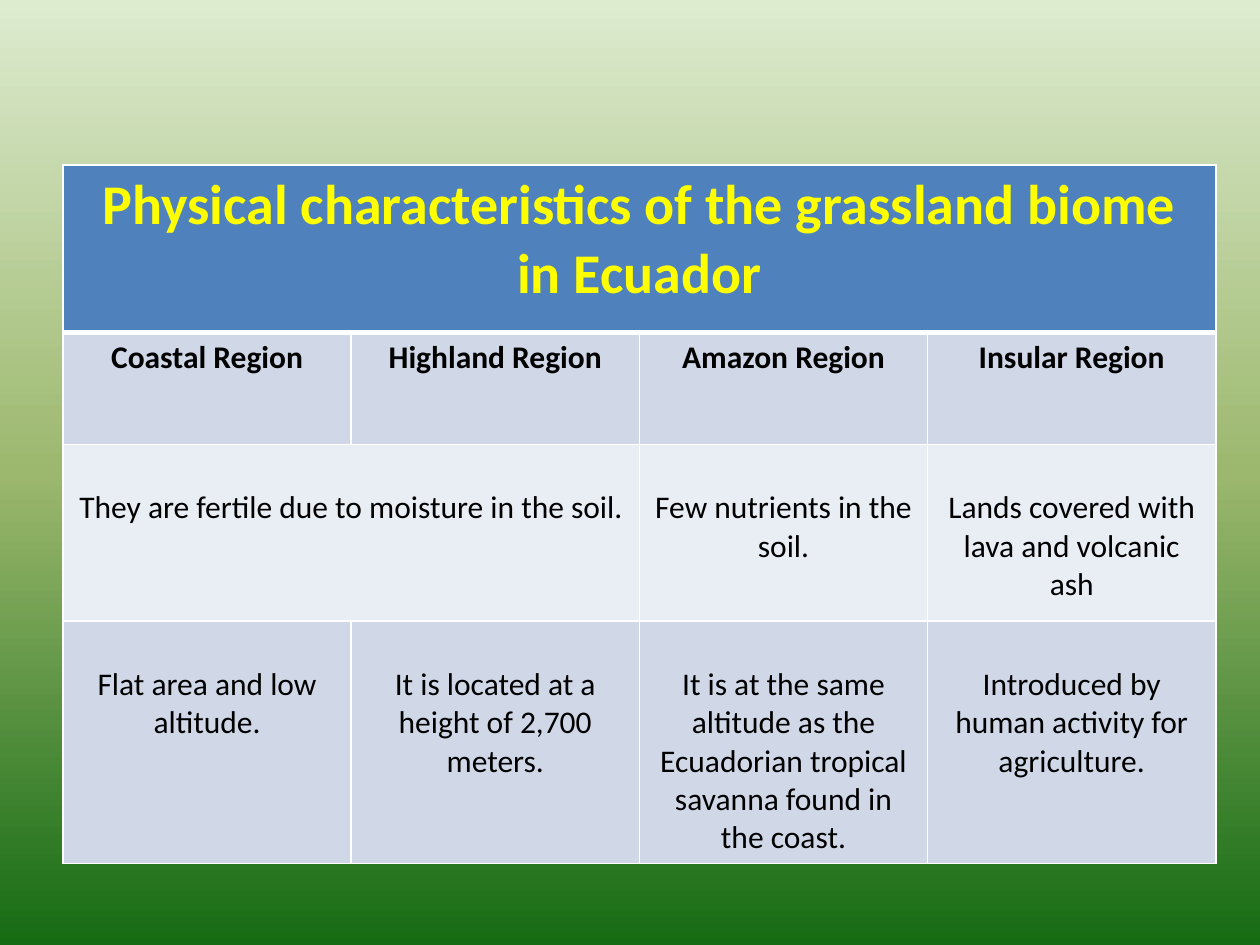
from copy import deepcopy

from lxml import etree
from pptx import Presentation
from pptx import util as u
from pptx.dml.color import RGBColor
from pptx.enum import text
from pptx.oxml import ns

SKY = RGBColor(0xDD, 0xEB, 0xCF)
MEADOW = RGBColor(0x9C, 0xB8, 0x6E)
FOREST = RGBColor(0x15, 0x6B, 0x13)
HEADING_BLUE = RGBColor(0x4F, 0x81, 0xBD)
BAND_DARK = RGBColor(0xD0, 0xD8, 0xE8)
BAND_LIGHT = RGBColor(0xE9, 0xED, 0xF4)
YELLOW = RGBColor(0xFF, 0xFF, 0x00)
BLACK = RGBColor(0, 0, 0)
WHITE = RGBColor(0xFF, 0xFF, 0xFF)

WIDTH, HEIGHT = u.Inches(10), u.Inches(7.5)
COLUMNS = 4
ROW_HEIGHTS = [1.33, 0.89, 1.4, 1.82]
ROW_FILLS = [HEADING_BLUE, BAND_DARK, BAND_LIGHT, BAND_DARK]
TOP_MARGINS = [0.05, 0.05, 0.35, 0.35]
SPANS = [(0, 0, 3), (2, 0, 1)]
BIOME_ROWS = [
    {0: "Physical characteristics of the grassland biome in Ecuador"},
    {0: "Coastal Region", 1: "Highland Region",
     2: "Amazon Region", 3: "Insular Region"},
    {0: "They are fertile due to moisture in the soil.",
     2: "Few nutrients in the soil.",
     3: "Lands covered with lava and volcanic ash"},
    {0: "Flat area and low altitude.",
     1: "It is located at a height of 2,700 meters.",
     2: "It is at the same altitude as the Ecuadorian tropical savanna found in the coast.",
     3: "Introduced by human activity for agriculture."},
]


def paint_background(slide):
    """Fill the slide with a vertical three-colour gradient."""
    fill = slide.background.fill
    fill.gradient()
    fill.gradient_angle = 270
    stop_list = slide.element.find(".//" + ns.qn("a:gsLst"))
    stop_list.insert(1, deepcopy(stop_list[0]))
    for stop, position, color in zip(fill.gradient_stops, (0, 0.5, 1), (SKY, MEADOW, FOREST)):
        stop.position = position
        stop.color.rgb = color


def draw_borders(cell, row):
    """Give a cell white edges, thick between heading and body."""
    properties = cell._tc.get_or_add_tcPr()
    widths = {"lnL": 1, "lnR": 1, "lnT": 3 if row == 1 else 1, "lnB": 3 if row == 0 else 1}
    for edge, width in widths.items():
        line = etree.SubElement(properties, ns.qn("a:" + edge), w=str(u.Pt(width)))
        paint = etree.SubElement(line, ns.qn("a:solidFill"))
        etree.SubElement(paint, ns.qn("a:srgbClr"), val=str(WHITE))


def write_cell(cell, wording, row):
    """Write one centred run in the style of its row."""
    paragraph = cell.text_frame.paragraphs[0]
    paragraph.alignment = text.PP_ALIGN.CENTER
    run = paragraph.add_run()
    run.text = wording
    run.font.name = "Calibri"
    run.font.size = u.Pt(32 if row == 0 else 18)
    run.font.bold = row < 2
    run.font.color.rgb = YELLOW if row == 0 else BLACK


def add_biome_table(slide, left, top, width, height):
    """Place the table of grassland characteristics in the given box."""
    table = slide.shapes.add_table(len(BIOME_ROWS), COLUMNS, left, top, width, height).table
    for column in table.columns:
        column.width = width // COLUMNS
    for row, wordings in enumerate(BIOME_ROWS):
        table.rows[row].height = int(height * ROW_HEIGHTS[row] / sum(ROW_HEIGHTS))
        for column in range(COLUMNS):
            cell = table.cell(row, column)
            draw_borders(cell, row)
            cell.fill.solid()
            cell.fill.fore_color.rgb = ROW_FILLS[row]
            cell.margin_top = u.Inches(TOP_MARGINS[row])
            if column in wordings:
                write_cell(cell, wordings[column], row)
    for row, first, last in SPANS:
        table.cell(row, first).merge(table.cell(row, last))


def main():
    """Build and save the slide."""
    deck = Presentation()
    deck.slide_width, deck.slide_height = WIDTH, HEIGHT
    slide = deck.slides.add_slide(deck.slide_layouts[6])
    paint_background(slide)
    add_biome_table(slide, int(WIDTH * 0.05), u.Inches(1.31),
                    u.Inches(9.15), u.Inches(sum(ROW_HEIGHTS)))
    deck.save("out.pptx")


if __name__ == "__main__":
    main()
